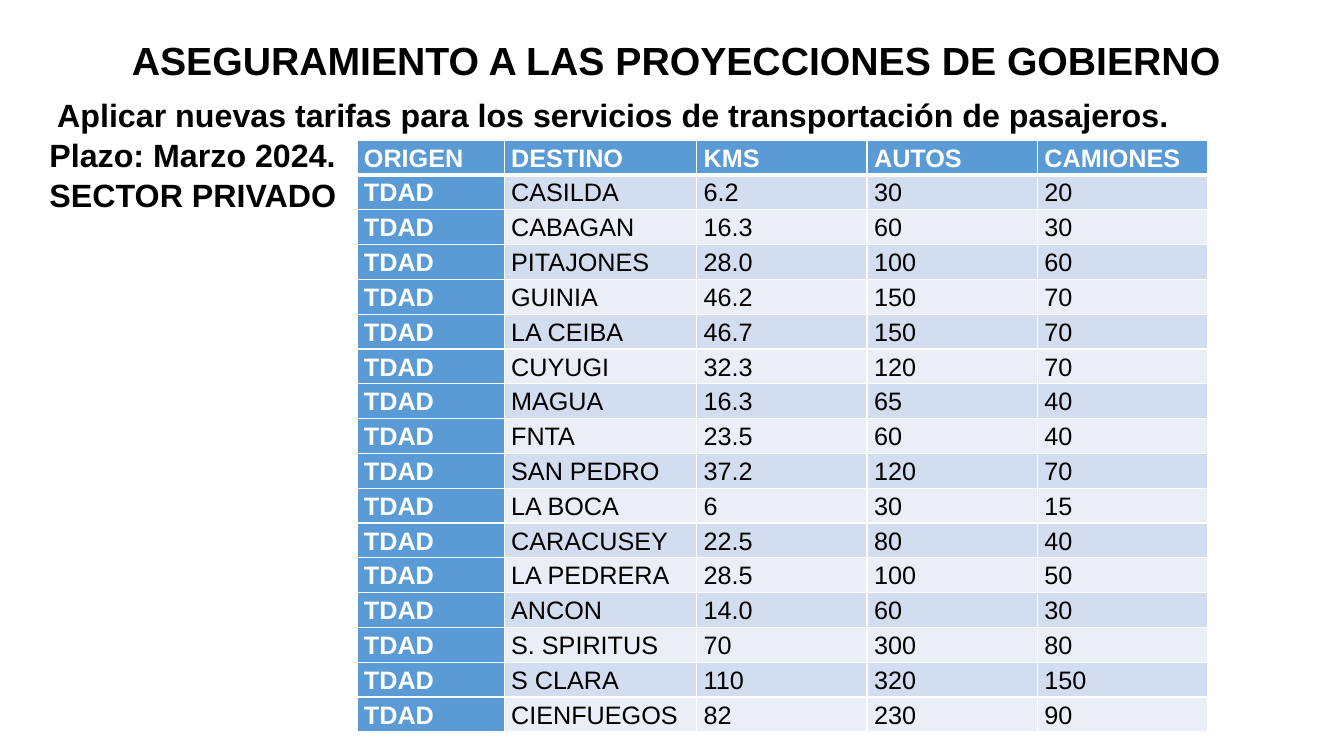
from pptx import Presentation
from pptx.dml.color import RGBColor
from pptx.enum.text import MSO_ANCHOR as ANCHOR, MSO_AUTO_SIZE as AUTO, PP_ALIGN as ALIGN
from pptx.oxml.ns import qn
from pptx.util import Inches, Pt
from lxml.etree import SubElement

BLACK, WHITE, BLUE = "000000", "FFFFFF", "5B9BD5"
BANDS = ("D2DEEF", "EAEFF7")

TITLE = "ASEGURAMIENTO A LAS PROYECCIONES DE GOBIERNO"
GOALS = [
    " Aplicar nuevas tarifas para los servicios de transportación de pasajeros.",
    "Plazo: Marzo 2024.",
    "SECTOR PRIVADO",
]
HEADER = ("ORIGEN", "DESTINO", "KMS", "AUTOS", "CAMIONES")
ORIGIN = "TDAD"
FARES = [
    ("CASILDA", "6.2", "30", "20"),
    ("CABAGAN", "16.3", "60", "30"),
    ("PITAJONES", "28.0", "100", "60"),
    ("GUINIA", "46.2", "150", "70"),
    ("LA CEIBA", "46.7", "150", "70"),
    ("CUYUGI", "32.3", "120", "70"),
    ("MAGUA", "16.3", "65", "40"),
    ("FNTA", "23.5", "60", "40"),
    ("SAN PEDRO", "37.2", "120", "70"),
    ("LA BOCA", "6", "30", "15"),
    ("CARACUSEY", "22.5", "80", "40"),
    ("LA PEDRERA", "28.5", "100", "50"),
    ("ANCON", "14.0", "60", "30"),
    ("S. SPIRITUS", "70", "300", "80"),
    ("S CLARA", "110", "320", "150"),
    ("CIENFUEGOS", "82", "230", "90"),
]


def rgb(color):
    return RGBColor.from_string(color)


def write(p, text, size=18, color=BLACK, bold=False, align=None, spacing=1.0, before=0):
    p.alignment = align
    p.line_spacing = spacing
    p.space_before = Pt(before)
    r = p.add_run()
    r.text = text
    r.font.name, r.font.size, r.font.bold = "Arial", Pt(size), bold
    r.font.color.rgb = rgb(color)


class SlideBuilder:
    def __init__(self, prs):
        self.s = prs.slides.add_slide(prs.slide_layouts[1])
        self.s.background.fill.solid()
        self.s.background.fill.fore_color.rgb = rgb(WHITE)

    def place(self, sp, box, anchor):
        sp.left, sp.top, sp.width, sp.height = map(Inches, box)
        tf = sp.text_frame
        tf.word_wrap, tf.auto_size, tf.vertical_anchor = True, AUTO.NONE, anchor
        return tf

    def title(self, text, box):
        tf = self.place(self.s.shapes.title, box, ANCHOR.MIDDLE)
        write(tf.paragraphs[0], text, size=28, bold=True, align=ALIGN.CENTER)

    def body(self, lines, box):
        tf = self.place(self.s.placeholders[1], box, ANCHOR.TOP)
        for i, line in enumerate(lines):
            p = tf.add_paragraph() if i else tf.paragraphs[0]
            p.level = 1
            write(p, line, size=23, bold=True, align=ALIGN.JUSTIFY, before=1)
            pPr = p._p.get_or_add_pPr()
            pPr.set("marL", str(Inches(0.63)))
            pPr.set("indent", str(Inches(-0.51)))
            SubElement(pPr, qn("a:buNone"))

    def borders(self, cell, **widths):
        tcPr = cell._tc.get_or_add_tcPr()
        for side in "LRTB":
            ln = SubElement(tcPr, qn("a:ln" + side), w=str(Pt(widths.get(side, 1))))
            fill = SubElement(ln, qn("a:solidFill"))
            SubElement(fill, qn("a:srgbClr"), val=WHITE)

    def cell(self, cell, text, fill, strong):
        cell.margin_left = cell.margin_right = Inches(0.07)
        cell.margin_top = cell.margin_bottom = 0
        cell.fill.solid()
        cell.fill.fore_color.rgb = rgb(fill)
        write(cell.text_frame.paragraphs[0], text, color=WHITE if strong else BLACK,
              bold=strong, spacing=1.15)

    def table(self, rows, box, widths):
        frame = self.s.shapes.add_table(len(rows), len(widths), *map(Inches, box))
        table = frame.table
        table.first_col = True
        for column, width in zip(table.columns, widths):
            column.width = Inches(width)
        for i, values in enumerate(rows):
            table.rows[i].height = Inches(box[3] / len(rows))
            for j, text in enumerate(values):
                cell = table.cell(i, j)
                strong = i == 0 or j == 0
                # The rule under the header is heavier than the others
                self.borders(cell, B=3 if i == 0 else 1, T=3 if i == 1 else 1)
                self.cell(cell, text, BLUE if strong else BANDS[(i - 1) % 2], strong)


def main():
    prs = Presentation()
    prs.slide_width, prs.slide_height = Inches(13.33), Inches(7.5)
    slide = SlideBuilder(prs)

    # Heading and goals
    slide.title(TITLE, (0.04, 0.06, 13.33, 1.07))
    slide.body(GOALS, (0.27, 0.9, 12.89, 6.09))

    # Fares by destination
    rows = [HEADER] + [(ORIGIN, *fare) for fare in FARES]
    slide.table(rows, (3.54, 1.39, 8.43, 5.87), (1.46, 1.91, 1.69, 1.69, 1.69))

    prs.save("out.pptx")


if __name__ == "__main__":
    main()
